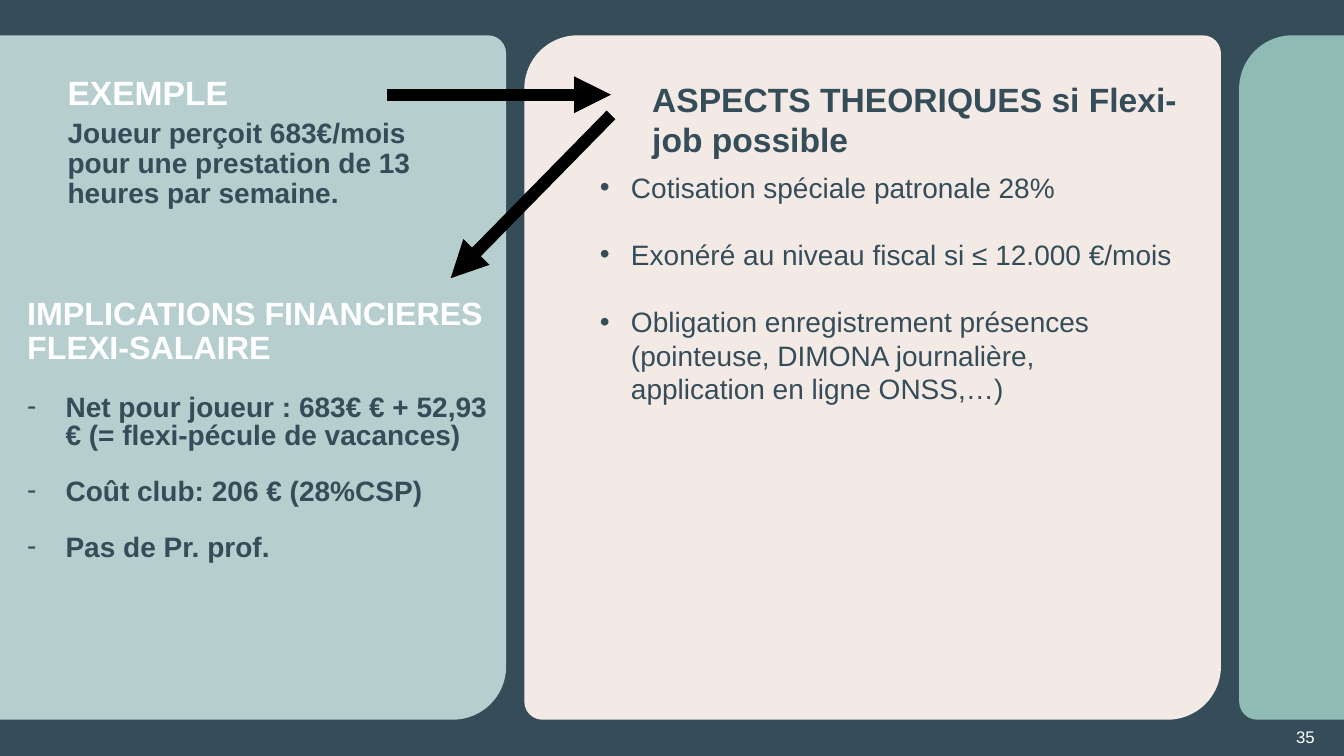
from lxml.etree import SubElement
from pptx import Presentation
from pptx.dml.color import RGBColor
from pptx.enum.shapes import MSO_CONNECTOR, MSO_SHAPE
from pptx.enum.text import MSO_ANCHOR, MSO_AUTO_SIZE, PP_ALIGN
from pptx.oxml.ns import qn
from pptx.util import Inches, Pt

COLORS = {
    "night": "354C59",
    "mist": "B7CECF",
    "sage": "90BBB5",
    "cream": "F3EAE6",
    "white": "FFFFFF",
    "black": "000000",
}
PANEL_TOP, PANEL_HEIGHT = 0.35, 6.79
LARGE_RADIUS, SMALL_RADIUS = 0.53, 0.18


def color(name):
    """Return the named colour of the palette."""
    return RGBColor.from_string(COLORS[name])


def add_panel(slide, left, width, fill):
    """Add a panel with two large and two small rounded corners."""
    panel = slide.shapes.add_shape(
        MSO_SHAPE.ROUND_2_DIAG_RECTANGLE,
        Inches(left), Inches(PANEL_TOP), Inches(width), Inches(PANEL_HEIGHT),
    )
    panel.adjustments[0] = LARGE_RADIUS / PANEL_HEIGHT
    panel.adjustments[1] = SMALL_RADIUS / PANEL_HEIGHT
    panel.shadow.inherit = False
    panel.fill.solid()
    panel.fill.fore_color.rgb = color(fill)
    panel.line.fill.background()


def set_frame(frame, side=0, edge=0, anchor=MSO_ANCHOR.TOP):
    """Set the wrapping, margins and anchor of a text frame."""
    frame.word_wrap = True
    frame.auto_size = MSO_AUTO_SIZE.NONE
    frame.vertical_anchor = anchor
    frame.margin_left = frame.margin_right = Inches(side)
    frame.margin_top = frame.margin_bottom = Inches(edge)


def add_box(slide, left, top, width, height, **margins):
    """Add a text box and return its frame."""
    box = slide.shapes.add_textbox(
        Inches(left), Inches(top), Inches(width), Inches(height)
    )
    set_frame(box.text_frame, **margins)
    return box.text_frame


def write(paragraph, text, size, ink="night", bold=False, spacing=None,
          before=0, align=PP_ALIGN.LEFT):
    """Fill a paragraph with formatted text."""
    paragraph.text = text
    paragraph.alignment = align
    paragraph.line_spacing = spacing
    paragraph.space_before = Pt(before)
    for run in paragraph.runs:
        run.font.name = "Arial"
        run.font.size = Pt(size)
        run.font.bold = bold
        run.font.color.rgb = color(ink)


def write_bullet(paragraph, text, mark, indent, **style):
    """Fill a paragraph with a hanging bullet and its text."""
    write(paragraph, text, 20, **style)
    properties = paragraph._p.get_or_add_pPr()
    properties.set("marL", str(Inches(indent)))
    properties.set("indent", str(-Inches(indent)))
    SubElement(properties, qn("a:buFont"), typeface="Arial")
    SubElement(properties, qn("a:buChar"), char=mark)


def add_arrow(slide, start, end):
    """Add a thick black arrow between two points."""
    arrow = slide.shapes.add_connector(
        MSO_CONNECTOR.STRAIGHT, *(Inches(value) for value in start + end)
    )
    arrow.line.width = Pt(8.75)
    arrow.line.color.rgb = color("black")
    SubElement(arrow.line._get_or_add_ln(), qn("a:tailEnd"), type="triangle")
    SubElement(arrow.element.spPr, qn("a:effectLst"))


def place_title(slide):
    """Place the example heading above the panels."""
    title = slide.shapes.title
    title.left, title.top = Inches(0.67), Inches(0.76)
    title.width, title.height = Inches(3.81), Inches(0.4)
    set_frame(title.text_frame)
    write(title.text_frame.paragraphs[0], "EXEMPLE", 24, "white", True, 0.9)
    title.element.getparent().append(title.element)


def add_implications(slide):
    """Add the financial implications of the flexi salary."""
    implications = add_box(slide, 0.27, 2.95, 4.62, 3.95)
    write(implications.paragraphs[0], "IMPLICATIONS FINANCIERES FLEXI-SALAIRE",
          23, "white", True, 0.9)
    for text in (
        "Net pour joueur : 683€ € + 52,93 € (= flexi-pécule de vacances)",
        "Coût club: 206 € (28%CSP)",
        "Pas de Pr. prof.",
    ):
        write_bullet(implications.add_paragraph(), text, "-", 0.38,
                     bold=True, spacing=Pt(20), before=20)


def add_theory(slide):
    """Add the theoretical aspects of the flexi job."""
    heading = add_box(slide, 6.37, 0.73, 5.58, 0.91, side=0.1, edge=0.05)
    write(heading.paragraphs[0], "ASPECTS THEORIQUES si Flexi-job possible",
          24, bold=True)
    aspects = add_box(slide, 5.85, 1.64, 5.92, 2.79, side=0.1, edge=0.05)
    for index, text in enumerate((
        "Cotisation spéciale patronale 28%",
        "Exonéré au niveau fiscal si ≤ 12.000 €/mois",
        "Obligation enregistrement présences (pointeuse, DIMONA journalière, "
        "application en ligne ONSS,…)",
    )):
        paragraph = aspects.add_paragraph() if index else aspects.paragraphs[0]
        write_bullet(paragraph, text, "•", 0.31, before=24 if index else 0)


def main():
    """Build and save the slide."""
    deck = Presentation()
    deck.slide_width, deck.slide_height = Inches(13.33), Inches(7.5)
    slide = deck.slides.add_slide(deck.slide_layouts[5])
    slide.background.fill.solid()
    slide.background.fill.fore_color.rgb = color("night")

    add_panel(slide, -2.77, 7.79, "mist")
    add_panel(slide, 12.29, 8.2, "sage")
    add_panel(slide, 5.2, 6.91, "cream")

    page_number = add_box(slide, 12.22, 7.21, 0.82, 0.2,
                          anchor=MSO_ANCHOR.MIDDLE)
    write(page_number.paragraphs[0], "35", 12, "white", align=PP_ALIGN.RIGHT)

    place_title(slide)
    add_implications(slide)
    example = add_box(slide, 0.67, 1.18, 3.81, 1.39)
    write(example.paragraphs[0],
          "Joueur perçoit 683€/mois pour une prestation de 13 heures par semaine.",
          20, bold=True, spacing=0.9)
    add_theory(slide)

    add_arrow(slide, (6.06, 1.14), (4.47, 2.76))
    add_arrow(slide, (3.84, 0.94), (6.06, 0.94))
    deck.save("out.pptx")


if __name__ == "__main__":
    main()
